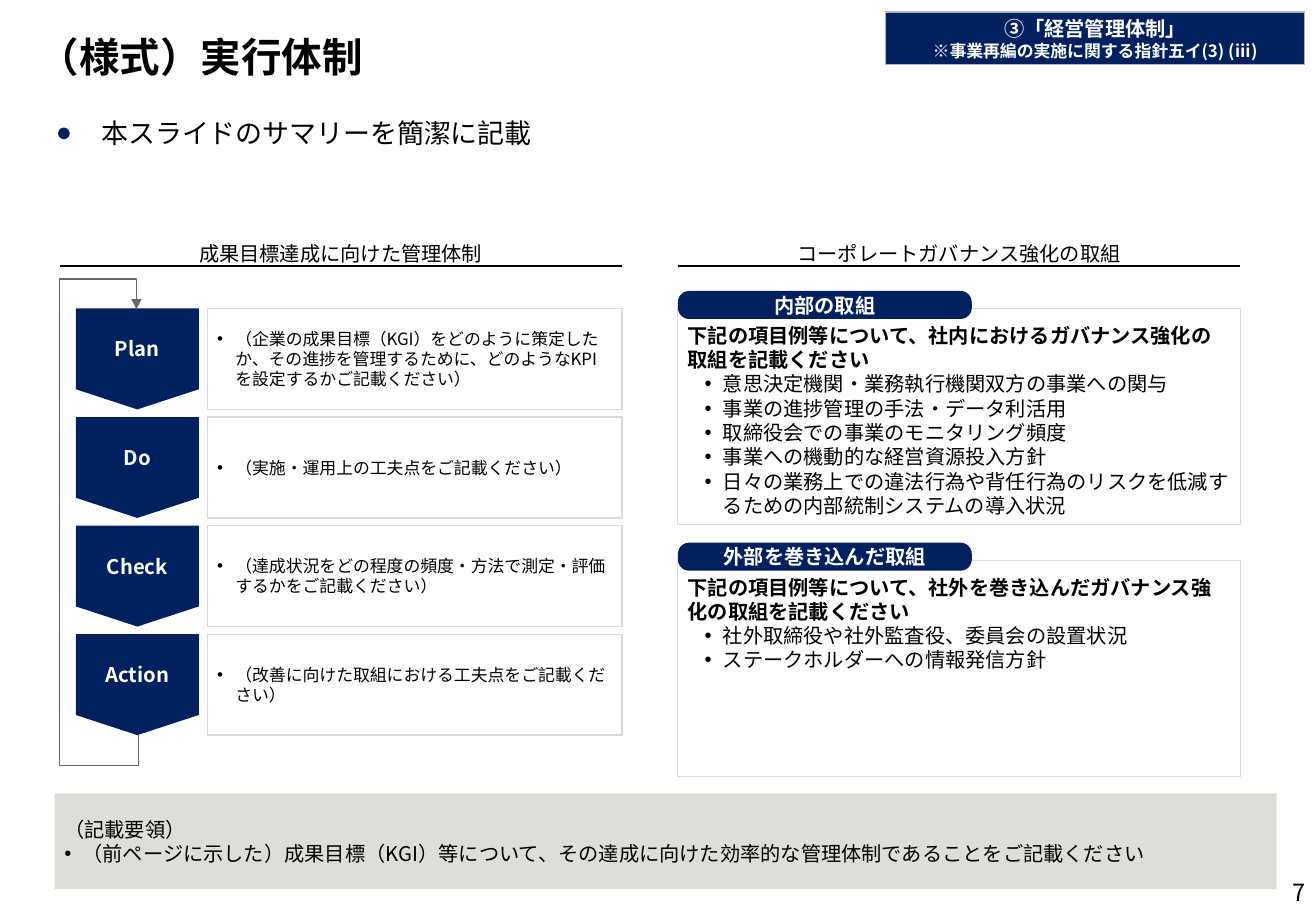
from lxml import etree
from pptx import Presentation
from pptx.dml.color import RGBColor
from pptx.enum.shapes import MSO_CONNECTOR, MSO_SHAPE
from pptx.enum.text import MSO_ANCHOR, MSO_AUTO_SIZE, PP_ALIGN
from pptx.oxml.ns import qn
from pptx.util import Pt

LEFT, CENTER, RIGHT = PP_ALIGN.LEFT, PP_ALIGN.CENTER, PP_ALIGN.RIGHT
TOP, MIDDLE, BOTTOM = MSO_ANCHOR.TOP, MSO_ANCHOR.MIDDLE, MSO_ANCHOR.BOTTOM
RECTANGLE, ROUNDED = MSO_SHAPE.RECTANGLE, MSO_SHAPE.ROUNDED_RECTANGLE
PENTAGON = MSO_SHAPE.FLOWCHART_OFFPAGE_CONNECTOR
STRAIGHT, ELBOW = MSO_CONNECTOR.STRAIGHT, MSO_CONNECTOR.ELBOW
FONT = "Noto Sans CJK JP"
COLORS = {"navy": "002060", "black": "000000", "white": "FFFFFF", "guide": "DDDDD9",
          "border": "D9D9D9", "callout_edge": "B2B2B2", "loop": "666666"}

TITLE = "（様式）実行体制"
SUMMARY = "本スライドのサマリーを簡潔に記載"
CALLOUT = [("③「経営管理体制」", 12), ("※事業再編の実施に関する指針五イ(3) (ⅲ)", 10)]
HEADINGS = ["成果目標達成に向けた管理体制", "コーポレートガバナンス強化の取組"]
CYCLE = [
    ("Plan", "（企業の成果目標（KGI）をどのように策定したか、その進捗を管理するために、"
             "どのようなKPIを設定するかご記載ください）"),
    ("Do", "（実施・運用上の工夫点をご記載ください）"),
    ("Check", "（達成状況をどの程度の頻度・方法で測定・評価するかをご記載ください）"),
    ("Action", "（改善に向けた取組における工夫点をご記載ください）"),
]
PANELS = [
    ("内部の取組", "下記の項目例等について、社内におけるガバナンス強化の取組を記載ください",
     ["意思決定機関・業務執行機関双方の事業への関与",
      "事業の進捗管理の手法・データ利活用",
      "取締役会での事業のモニタリング頻度",
      "事業への機動的な経営資源投入方針",
      "日々の業務上での違法行為や背任行為のリスクを低減するための内部統制システムの導入状況"]),
    ("外部を巻き込んだ取組", "下記の項目例等について、社外を巻き込んだガバナンス強化の取組を記載ください",
     ["社外取締役や社外監査役、委員会の設置状況",
      "ステークホルダーへの情報発信方針"]),
]
GUIDE_TITLE = "（記載要領）"
GUIDE = "（前ページに示した）成果目標（KGI）等について、その達成に向けた効率的な管理体制であることをご記載ください"
PAGE_NUMBER = "7"

COLUMN_LEFTS, COLUMN_WIDTH = (35.3, 401.8), 333.4
HEADING_LINE, CONTENT_TOP = 157.7, 182.9
STEP_LEFT, STEP_WIDTH, STEP_HEIGHT, STEP_PITCH = 44.9, 73, 59.8, 64.35
NOTE_LEFT = 123
PANEL_HEIGHT, PANEL_PITCH = 128.2, 149.2
TAB_WIDTH, TAB_HEIGHT, TAB_RISE = 174.2, 16.6, 10.4
INSETS = (5.76, 2.88, 5.76, 2.88)


def rgb(name):
    return RGBColor.from_string(COLORS[name])


def line(text, size=12, color="black", bold=False, align=LEFT, bullet=None, margin=0, hang=0):
    """Describe one paragraph."""
    return {"text": text, "size": size, "color": color, "bold": bold, "align": align,
            "bullet": bullet, "margin": margin, "hang": hang}


def add_bullet(paragraph, character, margin, hang):
    properties = paragraph._p.get_or_add_pPr()
    properties.set("marL", str(Pt(margin)))
    properties.set("indent", str(-Pt(hang)))
    if character == "●":
        color = etree.SubElement(properties, qn("a:buClr"))
        etree.SubElement(color, qn("a:srgbClr")).set("val", COLORS["navy"])
    etree.SubElement(properties, qn("a:buFont")).set("typeface", "Arial")
    etree.SubElement(properties, qn("a:buChar")).set("char", character)


def write(shape, lines, anchor=MIDDLE, insets=INSETS, wrap=True):
    frame = shape.text_frame
    frame.word_wrap = wrap
    frame.auto_size = MSO_AUTO_SIZE.NONE
    frame.vertical_anchor = anchor
    (frame.margin_left, frame.margin_top,
     frame.margin_right, frame.margin_bottom) = map(Pt, insets)
    for index, item in enumerate(lines):
        paragraph = frame.add_paragraph() if index else frame.paragraphs[0]
        if item["bullet"]:
            add_bullet(paragraph, item["bullet"], item["margin"], item["hang"])
        paragraph.alignment = item["align"]
        paragraph.line_spacing = Pt(round(item["size"] * 1.2, 1))
        run = paragraph.add_run()
        run.text = item["text"]
        run.font.size = Pt(item["size"])
        run.font.bold = item["bold"]
        run.font.color.rgb = rgb(item["color"])
        run.font.name = FONT
        etree.SubElement(run._r.get_or_add_rPr(), qn("a:ea")).set("typeface", FONT)


def add_box(slide, kind, box, fill=None, border=None):
    shape = slide.shapes.add_shape(kind, *map(Pt, box))
    shape.shadow.inherit = False
    if fill:
        shape.fill.solid()
        shape.fill.fore_color.rgb = rgb(fill)
    else:
        shape.fill.background()
    if border:
        shape.line.color.rgb = rgb(border)
        shape.line.width = Pt(0.75)
    else:
        shape.line.fill.background()
    return shape


def add_text(slide, box, lines, **layout):
    write(slide.shapes.add_textbox(*map(Pt, box)), lines, **layout)


def add_line(slide, kind, points, color):
    connector = slide.shapes.add_connector(kind, *map(Pt, points))
    connector.line.color.rgb = rgb(color)
    connector.line.width = Pt(0.75)
    etree.SubElement(connector._element.spPr, qn("a:effectLst"))
    return connector


def add_cycle_loop(slide):
    """Lead from below the last step round the left side to the top of the first."""
    start_x, end_x = 82, 80.9
    end_y = CONTENT_TOP + 0.4
    start_y = CONTENT_TOP + 3 * STEP_PITCH + STEP_HEIGHT
    span, drift, reach = start_y - end_y, start_x - end_x, 18
    middle_x, middle_y = (start_x + end_x) / 2, (start_y + end_y) / 2
    # The five-part elbow lies flat, then turns by 90 degrees about its centre.
    points = (middle_x + span / 2, middle_y - drift / 2,
              middle_x - span / 2, middle_y + drift / 2)
    properties = add_line(slide, ELBOW, points, "loop")._element.spPr
    properties.find(qn("a:xfrm")).set("rot", "5400000")
    geometry = properties.find(qn("a:prstGeom"))
    geometry.set("prst", "bentConnector5")
    guides = geometry.find(qn("a:avLst"))
    if guides is None:
        guides = etree.SubElement(geometry, qn("a:avLst"))
    ratios = (-reach / span, (start_x - COLUMN_LEFTS[0]) / drift, 1 + reach / span)
    for number, ratio in enumerate(ratios, 1):
        guide = etree.SubElement(guides, qn("a:gd"))
        guide.set("name", f"adj{number}")
        guide.set("fmla", f"val {round(ratio * 100000)}")
    etree.SubElement(properties.find(qn("a:ln")), qn("a:tailEnd")).set("type", "triangle")


def add_header(slide):
    title = slide.shapes.title
    title.left, title.top, title.width, title.height = map(Pt, (15.8, 15.1, 748.8, 36))
    write(title, [line(TITLE, 24, bold=True)], insets=(7.2, 3.6, 7.2, 3.6))
    add_text(slide, (15.8, 60.5, 748.8, 36.7),
             [line(SUMMARY, 16, bullet="●", margin=27, hang=27)],
             anchor=TOP, insets=(17.3, 8.6, 17.3, 8.6))
    callout = add_box(slide, RECTANGLE, (524.9, 7.2, 248.4, 31), "navy", "callout_edge")
    write(callout, [line(text, size, "white", True, CENTER) for text, size in CALLOUT],
          wrap=False)


def add_cycle(slide):
    note_width = COLUMN_LEFTS[0] + COLUMN_WIDTH - NOTE_LEFT
    for index, (step, note) in enumerate(CYCLE):
        top = CONTENT_TOP + index * STEP_PITCH
        box = add_box(slide, RECTANGLE, (NOTE_LEFT, top, note_width, STEP_HEIGHT),
                      "white", "border")
        write(box, [line(note, 10, bullet="•", margin=10.8, hang=10.8)])
        arrow = add_box(slide, PENTAGON, (STEP_LEFT, top, STEP_WIDTH, STEP_HEIGHT), "navy")
        write(arrow, [line(step, 12, "white", True, CENTER)])
    add_cycle_loop(slide)


def add_panels(slide):
    left = COLUMN_LEFTS[1]
    for index, (name, lead, items) in enumerate(PANELS):
        top = CONTENT_TOP + index * PANEL_PITCH
        panel = add_box(slide, RECTANGLE, (left, top, COLUMN_WIDTH, PANEL_HEIGHT),
                        border="border")
        bullets = [line(item, bullet="•", margin=20.9, hang=10.8) for item in items]
        write(panel, [line(lead, bold=True)] + bullets, anchor=TOP,
              insets=(5.76, 8.64, 5, 2.88))
        tab = add_box(slide, ROUNDED, (left, top - TAB_RISE, TAB_WIDTH, TAB_HEIGHT), "navy")
        tab.adjustments[0] = 0.4
        write(tab, [line(name, 12, "white", True, CENTER)], insets=(2.88, 0, 2.88, 0))


def main():
    presentation = Presentation()
    presentation.slide_width, presentation.slide_height = Pt(780), Pt(540)
    slide = presentation.slides.add_slide(presentation.slide_layouts[5])
    add_header(slide)
    for left, heading in zip(COLUMN_LEFTS, HEADINGS):
        add_text(slide, (left, HEADING_LINE - 20, COLUMN_WIDTH, 20),
                 [line(heading, align=CENTER)], anchor=BOTTOM, insets=(0, 0, 0, 0))
        add_line(slide, STRAIGHT,
                 (left, HEADING_LINE, left + COLUMN_WIDTH, HEADING_LINE), "black")
    add_cycle(slide)
    add_panels(slide)
    guide = add_box(slide, RECTANGLE, (32.4, 470.2, 724.3, 56.9), "guide")
    write(guide, [line(GUIDE_TITLE), line(GUIDE, bullet="•", margin=10.8, hang=10.8)])
    add_text(slide, (720, 517, 60, 23), [line(PAGE_NUMBER, 14, align=RIGHT)],
             insets=(0, 0, 6, 0))
    presentation.save("out.pptx")


if __name__ == "__main__":
    main()
